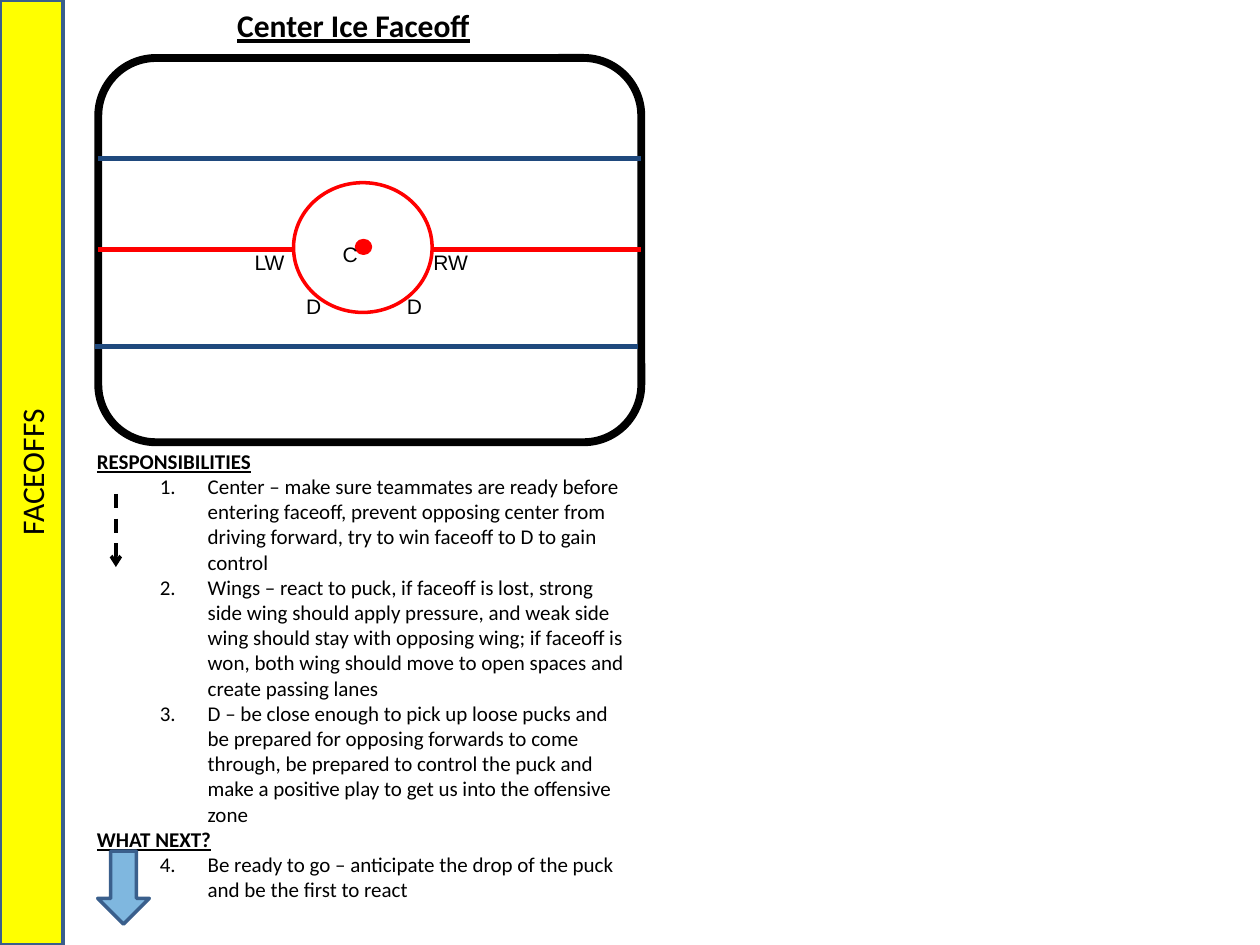
from pptx import Presentation
from pptx.dml.color import RGBColor
from pptx.enum.dml import MSO_LINE
from pptx.enum.shapes import MSO_CONNECTOR, MSO_SHAPE
from pptx.enum.text import MSO_ANCHOR, MSO_AUTO_SIZE, PP_ALIGN
from pptx.oxml.ns import qn
from pptx.util import Pt
from lxml import etree

PX = 9144  # 100 px to the inch
BLACK = RGBColor(0, 0, 0)
WHITE = RGBColor(255, 255, 255)
RED = RGBColor(255, 0, 0)
YELLOW = RGBColor(255, 255, 0)
NAVY = RGBColor(0x1F, 0x49, 0x7D)
BLUE = RGBColor(0x00, 0x70, 0xC0)
EDGE = RGBColor(0x3A, 0x5F, 0x8C)
RECT, ROUND_RECT = MSO_SHAPE.RECTANGLE, MSO_SHAPE.ROUNDED_RECTANGLE
OVAL, ARROW = MSO_SHAPE.OVAL, MSO_SHAPE.RIGHT_ARROW
STRAIGHT = MSO_CONNECTOR.STRAIGHT
DASH = MSO_LINE.DASH
CENTER, MIDDLE = PP_ALIGN.CENTER, MSO_ANCHOR.MIDDLE
GROW = MSO_AUTO_SIZE.SHAPE_TO_FIT_TEXT

LINE_LEFT, LINE_WIDTH = 78, 431
POSITIONS = [("C", 272, 192, 36), ("RW", 344, 198, 36), ("LW", 202, 198, 42),
             ("D", 243, 233, 36), ("D", 323, 233, 36)]
DUTIES = [
    "Center – make sure teammates are ready before entering faceoff, prevent "
    "opposing center from driving forward, try to win faceoff to D to gain control",
    "Wings – react to puck, if faceoff is lost, strong side wing should apply "
    "pressure, and weak side wing should stay with opposing wing; if faceoff is "
    "won, both wing should move to open spaces and create passing lanes",
    "D – be close enough to pick up loose pucks and be prepared for opposing "
    "forwards to come through, be prepared to control the puck and make a "
    "positive play to get us into the offensive zone",
]
NEXT_STEP = "Be ready to go – anticipate the drop of the puck and be the first to react"


class Board:
    """Draws on one slide, or on a group of it, in one style."""

    def __init__(self, slide, font="Calibri"):
        self.slide = slide
        self.shapes = slide.shapes
        self.font = font

    def start_group(self):
        self.shapes = self.slide.shapes.add_group_shape().shapes

    def end_group(self):
        self.shapes = self.slide.shapes

    def shape(self, kind, x, y, w, h, fill, line, width, rotation=0):
        sp = self.shapes.add_shape(kind, x * PX, y * PX, w * PX, h * PX)
        sp.shadow.inherit = False
        if fill is None:
            sp.fill.background()
        else:
            sp.fill.solid()
            sp.fill.fore_color.rgb = fill
        sp.line.color.rgb = line
        sp.line.width = Pt(width)
        sp.rotation = rotation
        return sp

    def line(self, x1, y1, x2, y2, color, width):
        cx = self.shapes.add_connector(STRAIGHT, x1 * PX, y1 * PX, x2 * PX, y2 * PX)
        cx.line.color.rgb = color
        cx.line.width = Pt(width)
        etree.SubElement(cx._element.spPr, qn("a:effectLst"))
        return cx

    def text_box(self, x, y, w, h, wrap=True, margin=None):
        tf = self.shapes.add_textbox(x * PX, y * PX, w * PX, h * PX).text_frame
        tf.word_wrap = wrap
        tf.auto_size = GROW
        if margin is not None:
            tf.margin_left = tf.margin_right = margin * PX
            tf.margin_top = tf.margin_bottom = margin * PX
        return tf

    def run(self, p, text, size, heading=False, font=None):
        r = p.add_run()
        r.text = text
        r.font.name = font or self.font
        r.font.size = Pt(size)
        r.font.color.rgb = BLACK
        r.font.bold = r.font.underline = heading

    def numbered(self, p, text, number):
        p.level = 1
        pPr = p._p.get_or_add_pPr()
        pPr.set("marL", str(88 * PX))
        pPr.set("indent", str(-38 * PX))
        bullet = etree.SubElement(pPr, qn("a:buAutoNum"), type="arabicPeriod")
        if number > len(DUTIES):
            bullet.set("startAt", str(number))
        self.run(p, text, 12)


def draw_notes(board):
    tf = board.text_box(67, 351, 442, 374)
    board.run(tf.paragraphs[0], "RESPONSIBILITIES", 12, heading=True)
    for number, duty in enumerate(DUTIES, 1):
        board.numbered(tf.add_paragraph(), duty, number)
    board.run(tf.add_paragraph(), "WHAT NEXT?", 12, heading=True)
    board.numbered(tf.add_paragraph(), NEXT_STEP, len(DUTIES) + 1)


def draw_title(board):
    p = board.text_box(177, 0, 207, 40, wrap=False).paragraphs[0]
    p.alignment = CENTER
    board.run(p, "Center Ice Faceoff", 18, heading=True)


def draw_side_tab(board):
    tf = board.shape(RECT, 0, 0, 50, 750, YELLOW, EDGE, 2).text_frame
    tf.vertical_anchor = MIDDLE
    tf._txBody.bodyPr.set("vert", "vert270")
    p = tf.paragraphs[0]
    p.alignment = CENTER
    board.run(p, "FACEOFFS", 18)


def draw_arrows(board):
    block = board.shape(ARROW, 69, 684, 58, 41, BLUE, EDGE, 2, rotation=90)
    color = block._element.spPr.find(qn("a:solidFill"))[0]
    etree.SubElement(color, qn("a:alpha"), val="50000")
    dashed = board.line(92, 392, 92, 450, BLACK, 2)
    dashed.line.dash_style = DASH
    etree.SubElement(dashed.line._get_or_add_ln(), qn("a:tailEnd"), type="arrow")


def draw_rink(board):
    board.start_group()
    boards = board.shape(ROUND_RECT, 141, -17, 305, 431, None, BLACK, 4.5, rotation=270)
    boards.adjustments[0] = 0.15
    for y, color in ((126, NAVY), (198, RED)):
        board.line(LINE_LEFT, y, LINE_LEFT + LINE_WIDTH, y, color, 3)
    board.shape(OVAL, 233, 145, 110, 103, WHITE, RED, 2)
    board.shape(OVAL, 283, 191, 11, 10, RED, RED, 2)
    board.end_group()
    board.line(75, 275, 75 + LINE_WIDTH, 275, NAVY, 3)
    for name, x, y, w in POSITIONS:
        tf = board.text_box(x, y, w, 20, margin=0)
        board.run(tf.paragraphs[0], name, 12, font="Arial")


def main():
    prs = Presentation()
    prs.slide_width, prs.slide_height = 1000 * PX, 750 * PX
    board = Board(prs.slides.add_slide(prs.slide_layouts[6]))
    draw_notes(board)
    draw_title(board)
    draw_side_tab(board)
    draw_arrows(board)
    draw_rink(board)
    prs.save("out.pptx")


if __name__ == "__main__":
    main()
